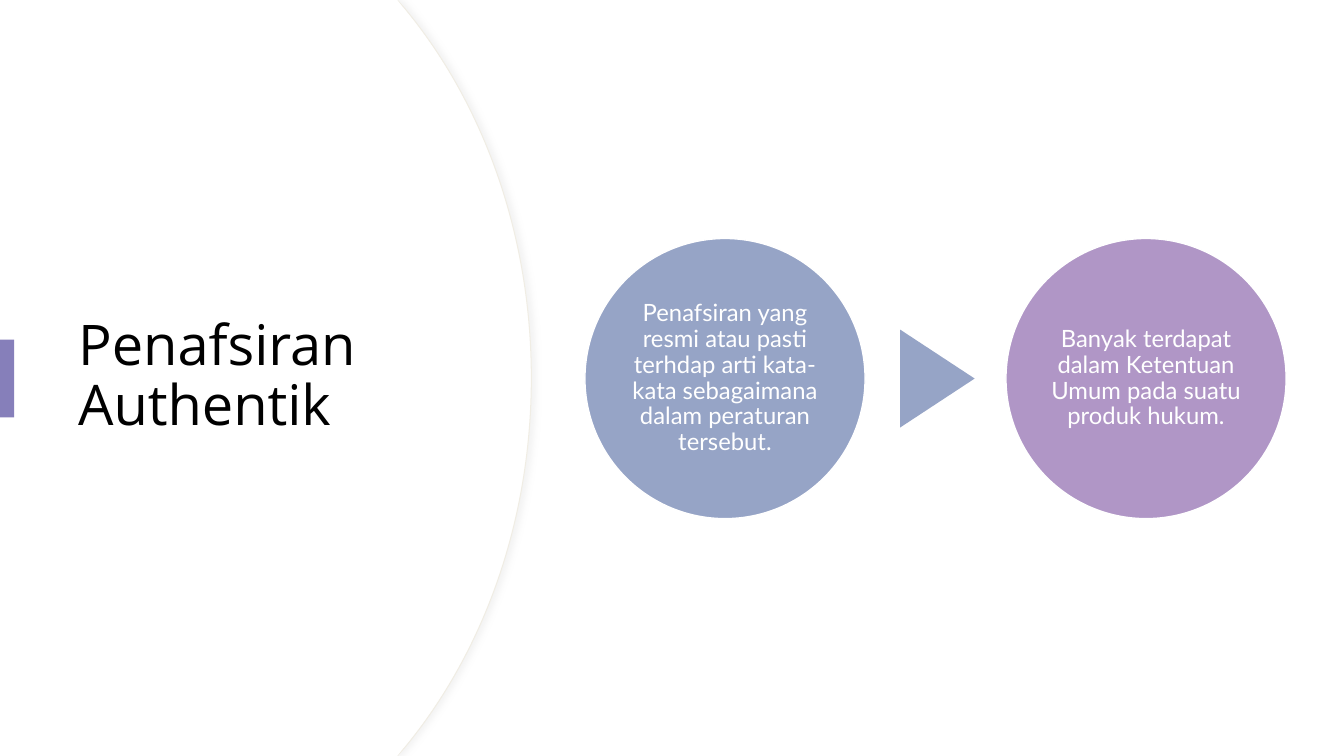
import pptx
import pptx.dml.color
import pptx.enum.shapes
import pptx.enum.text
import pptx.oxml
import pptx.util
from pptx.util import Cm

# Content
TITLE = "Penafsiran Authentik"
STEPS = [
    ("Penafsiran yang resmi atau pasti terhdap arti kata-kata sebagaimana "
     "dalam peraturan tersebut.", "blue"),
    ("Banyak terdapat dalam Ketentuan Umum pada suatu produk hukum.", "lilac"),
]

THEME = {
    "white": "FFFFFF", "black": "000000", "edge": "F0EDE4", "shadow": "D9D9D9",
    "accent": "867FBA", "blue": "96A4C6", "lilac": "B096C6",
    "title_font": "Open Sans", "title_size": 40,
    "body_font": "Lato", "body_size": 17,
}

# Layout in centimetres
SLIDE_WIDTH, SLIDE_HEIGHT = 33.867, 19.05
MIDDLE = SLIDE_HEIGHT / 2
PANEL_TOP_RIGHT = 10.01
PANEL_CURVE = [(10.19, 0.2), (12.17, 2.59), (13.39, 5.89), (13.39, MIDDLE)]
PANEL_INSET = 0.03
CIRCLE_LEFT, CIRCLE_TOP, CIRCLE_SIZE, CIRCLE_PITCH = 14.74, 6.01, 7.06, 10.61
ARROW_BASE, ARROW_HEIGHT, ARROW_CENTER, ARROW_MIDDLE = 2.47, 1.88, 23.62, 9.54

SHAPES = pptx.enum.shapes.MSO_SHAPE
ALIGN = pptx.enum.text.PP_ALIGN


def color(name):
    return pptx.dml.color.RGBColor.from_string(THEME[name])


def paint(shape, fill, line=None, line_width=1):
    shape.shadow.inherit = False
    shape.fill.solid()
    shape.fill.fore_color.rgb = color(fill)
    if line:
        shape.line.color.rgb = color(line)
        shape.line.width = pptx.util.Pt(line_width)
    else:
        shape.line.fill.background()


def write(shape, text, style, text_color, align):
    frame = shape.text_frame
    frame.text = text
    frame.word_wrap = True
    frame.vertical_anchor = pptx.enum.text.MSO_ANCHOR.MIDDLE
    paragraph = frame.paragraphs[0]
    paragraph.alignment = align
    paragraph.line_spacing = 0.9
    font = paragraph.runs[0].font
    font.name = THEME[style + "_font"]
    font.size = pptx.util.Pt(THEME[style + "_size"])
    font.color.rgb = color(text_color)


def merge_curve(segments):
    """Turn three straight segments into one cubic curve."""
    first = segments[0]
    curve = pptx.oxml.parse_xml(f'<a:cubicBezTo {pptx.oxml.ns.nsdecls("a")}/>')
    first.addprevious(curve)
    for segment in segments:
        curve.append(segment[0])
        segment.getparent().remove(segment)


def add_panel(slide, inset):
    upper = [(PANEL_TOP_RIGHT, 0)] + [(x - inset, y) for x, y in PANEL_CURVE]
    lower = [(x, SLIDE_HEIGHT - y) for x, y in reversed(upper[:-1])]
    outline = upper + lower + [(0, SLIDE_HEIGHT)]
    builder = slide.shapes.build_freeform(0, 0)
    builder.add_line_segments([(Cm(x), Cm(y)) for x, y in outline], close=True)
    panel = builder.convert_to_shape()
    segments = list(panel._element.spPr.iter(pptx.oxml.ns.qn("a:lnTo")))
    merge_curve(segments[2:5])
    merge_curve(segments[5:8])
    return panel


def add_shadow(shape):
    effects = shape._element.spPr.find(pptx.oxml.ns.qn("a:effectLst"))
    effects.append(pptx.oxml.parse_xml(
        f'<a:outerShdw {pptx.oxml.ns.nsdecls("a")} blurRad="50800" dist="38100" dir="0">'
        f'<a:srgbClr val="{THEME["shadow"]}"><a:alpha val="30000"/></a:srgbClr>'
        '</a:outerShdw>'))


def main():
    presentation = pptx.Presentation()
    presentation.slide_width = Cm(SLIDE_WIDTH)
    presentation.slide_height = Cm(SLIDE_HEIGHT)
    slide = presentation.slides.add_slide(presentation.slide_layouts[6])
    shapes = slide.shapes

    # White backdrop
    backdrop = shapes.add_shape(SHAPES.RECTANGLE, 0, 0, Cm(SLIDE_WIDTH), Cm(SLIDE_HEIGHT))
    paint(backdrop, "white")

    # Curved title panel: outlined edge, then its plain face
    edge = add_panel(slide, 0)
    paint(edge, "white", "edge", 0.75)
    add_shadow(edge)
    paint(add_panel(slide, PANEL_INSET), "white")

    # Title and accent bar
    title = shapes.add_textbox(Cm(1.72), Cm(3.23), Cm(10), Cm(12.57))
    write(title, TITLE, "title", "black", ALIGN.LEFT)
    bar = shapes.add_shape(SHAPES.RECTANGLE, 0, Cm(8.56), Cm(0.36), Cm(1.96))
    paint(bar, "accent")

    # Circles
    for index, (text, fill) in enumerate(STEPS):
        circle = shapes.add_shape(
            SHAPES.OVAL, Cm(CIRCLE_LEFT + index * CIRCLE_PITCH), Cm(CIRCLE_TOP),
            Cm(CIRCLE_SIZE), Cm(CIRCLE_SIZE))
        paint(circle, fill, "white")
        frame = circle.text_frame
        frame.margin_left = frame.margin_right = Cm(0.05)
        frame.margin_top = frame.margin_bottom = Cm(0.05)
        write(circle, text, "body", "white", ALIGN.CENTER)

    # Triangle pointing from the first circle to the second
    arrow = shapes.add_shape(
        SHAPES.ISOSCELES_TRIANGLE, Cm(ARROW_CENTER - ARROW_BASE / 2),
        Cm(ARROW_MIDDLE - ARROW_HEIGHT / 2), Cm(ARROW_BASE), Cm(ARROW_HEIGHT))
    arrow.rotation = 90
    paint(arrow, "blue")

    presentation.save("out.pptx")


if __name__ == "__main__":
    main()
